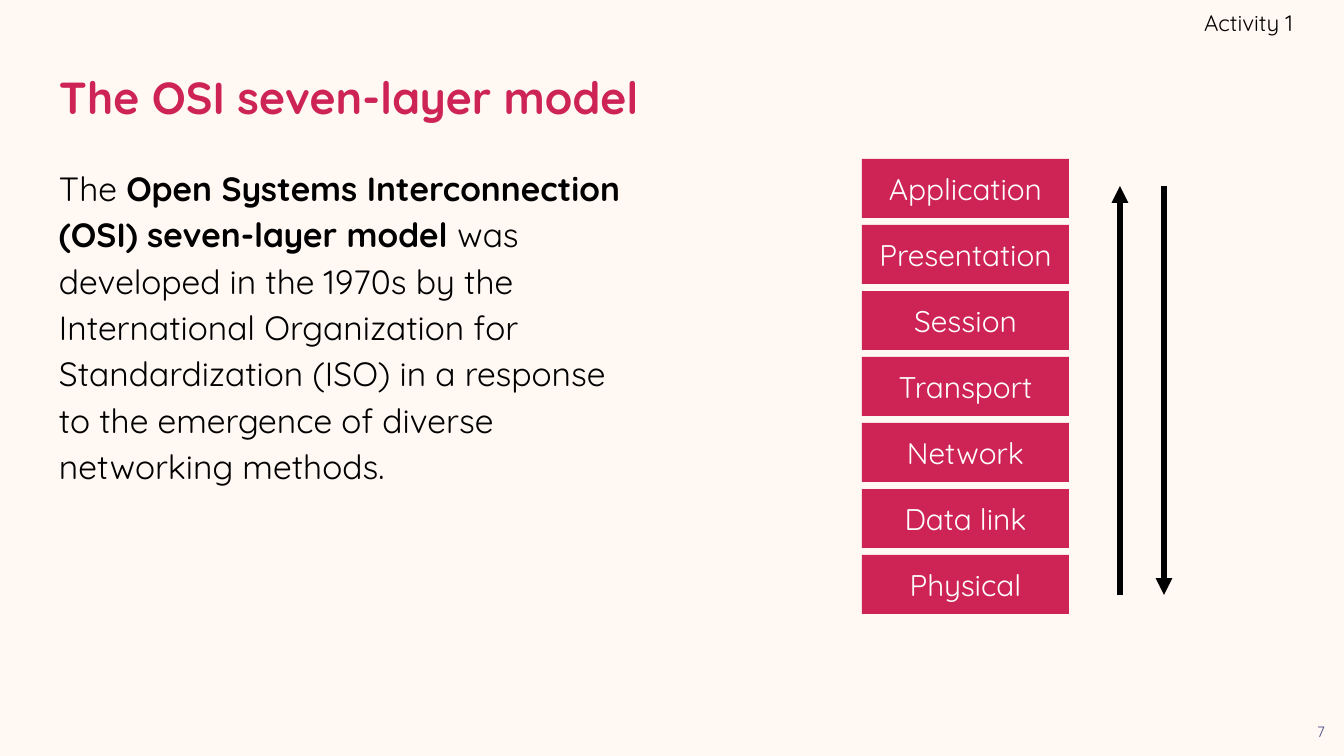
from typing import NamedTuple

from lxml.etree import SubElement
from pptx import Presentation
from pptx.dml.color import RGBColor
from pptx.enum.shapes import MSO_CONNECTOR, MSO_SHAPE
from pptx.enum.text import MSO_ANCHOR as Anchor, MSO_AUTO_SIZE, PP_ALIGN as Align
from pptx.oxml.ns import qn
from pptx.util import Emu, Pt

FONT = "Quicksand"
CREAM, CRIMSON, BLACK, WHITE, INDIGO = "FFF8F3", "CD2355", "000000", "FFFFFF", "494985"
SLIDE_WIDTH, SLIDE_HEIGHT = 1344, 756
EMU_PER_PX = 9144000 / SLIDE_WIDTH
INSET = 13

LAYERS = ["Application", "Presentation", "Session", "Transport",
          "Network", "Data link", "Physical"]
LAYER_PITCH = 66


class Box(NamedTuple):
    left: int
    top: int
    width: int
    height: int


class Arrow(NamedTuple):
    x: int
    start: int
    end: int


FIRST_LAYER = Box(862, 159, 207, 59)
ARROWS = [Arrow(1120, 595, 186), Arrow(1164, 186, 595)]


def px(length: int) -> Emu:
    return Emu(round(length * EMU_PER_PX))


def emu_box(box: Box) -> list[Emu]:
    return [px(length) for length in box]


def color(value: str) -> RGBColor:
    return RGBColor.from_string(value)


def write(shape, *parts: str, size: int, ink: str = BLACK, bold: bool = False,
          align=Align.LEFT, anchor=Anchor.MIDDLE, spacing: float = 1.0,
          right_inset: int = INSET) -> None:
    """Fill the shape with runs; every second part has its weight flipped."""
    frame = shape.text_frame
    frame.word_wrap = True
    frame.auto_size = MSO_AUTO_SIZE.NONE
    frame.vertical_anchor = anchor
    frame.margin_left = frame.margin_top = frame.margin_bottom = px(INSET)
    frame.margin_right = px(right_inset)
    paragraph = frame.paragraphs[0]
    paragraph.alignment = align
    paragraph.line_spacing = spacing
    paragraph.space_before = Pt(0)
    for index, part in enumerate(parts):
        run = paragraph.add_run()
        run.text = part
        run.font.name = FONT
        run.font.size = Pt(size)
        run.font.bold = bold != (index % 2 == 1)
        run.font.color.rgb = color(ink)


def add_text(slide, box: Box, *parts: str, **text_format) -> None:
    write(slide.shapes.add_textbox(*emu_box(box)), *parts, **text_format)


def add_layer(slide, box: Box, name: str) -> None:
    layer = slide.shapes.add_shape(MSO_SHAPE.RECTANGLE, *emu_box(box))
    layer.shadow.inherit = False
    layer.fill.solid()
    layer.fill.fore_color.rgb = color(CRIMSON)
    layer.line.fill.background()
    write(layer, name, size=16, ink=WHITE, align=Align.CENTER)


def add_arrow(slide, arrow: Arrow) -> None:
    x = px(arrow.x)
    connector = slide.shapes.add_connector(
        MSO_CONNECTOR.STRAIGHT, x, px(arrow.start), x, px(arrow.end))
    connector.line.color.rgb = color(BLACK)
    connector.line.width = Pt(3)
    SubElement(connector.line._get_or_add_ln(), qn("a:tailEnd"), type="triangle")
    SubElement(connector._element.spPr, qn("a:effectLst"))


def main() -> None:
    deck = Presentation()
    deck.slide_width, deck.slide_height = px(SLIDE_WIDTH), px(SLIDE_HEIGHT)
    slide = deck.slides.add_slide(deck.slide_layouts.get_by_name("Title Only"))
    slide.background.fill.solid()
    slide.background.fill.fore_color.rgb = color(CREAM)

    title = slide.shapes.title
    title.left, title.top, title.width, title.height = emu_box(Box(46, 46, 1252, 102))
    write(title, "The OSI seven-layer model", size=24, ink=CRIMSON, bold=True)

    add_text(slide, Box(46, 149, 602, 538),
             "The ",
             "Open Systems Interconnection (OSI) seven-layer model ",
             "was developed in the 1970s by the International Organization for "
             "Standardization (ISO) in a response to the emergence of diverse "
             "networking methods.",
             size=18, anchor=Anchor.TOP, spacing=1.15)
    add_text(slide, Box(1005, 0, 288, 46), "Activity 1",
             size=12, align=Align.RIGHT, right_inset=0)
    add_text(slide, Box(1298, 710, 46, 46), "7",
             size=8, ink=INDIGO, align=Align.CENTER, anchor=Anchor.TOP)

    for index, name in enumerate(LAYERS):
        top = FIRST_LAYER.top + index * LAYER_PITCH
        add_layer(slide, FIRST_LAYER._replace(top=top), name)
    for arrow in ARROWS:
        add_arrow(slide, arrow)

    deck.save("out.pptx")


if __name__ == "__main__":
    main()
